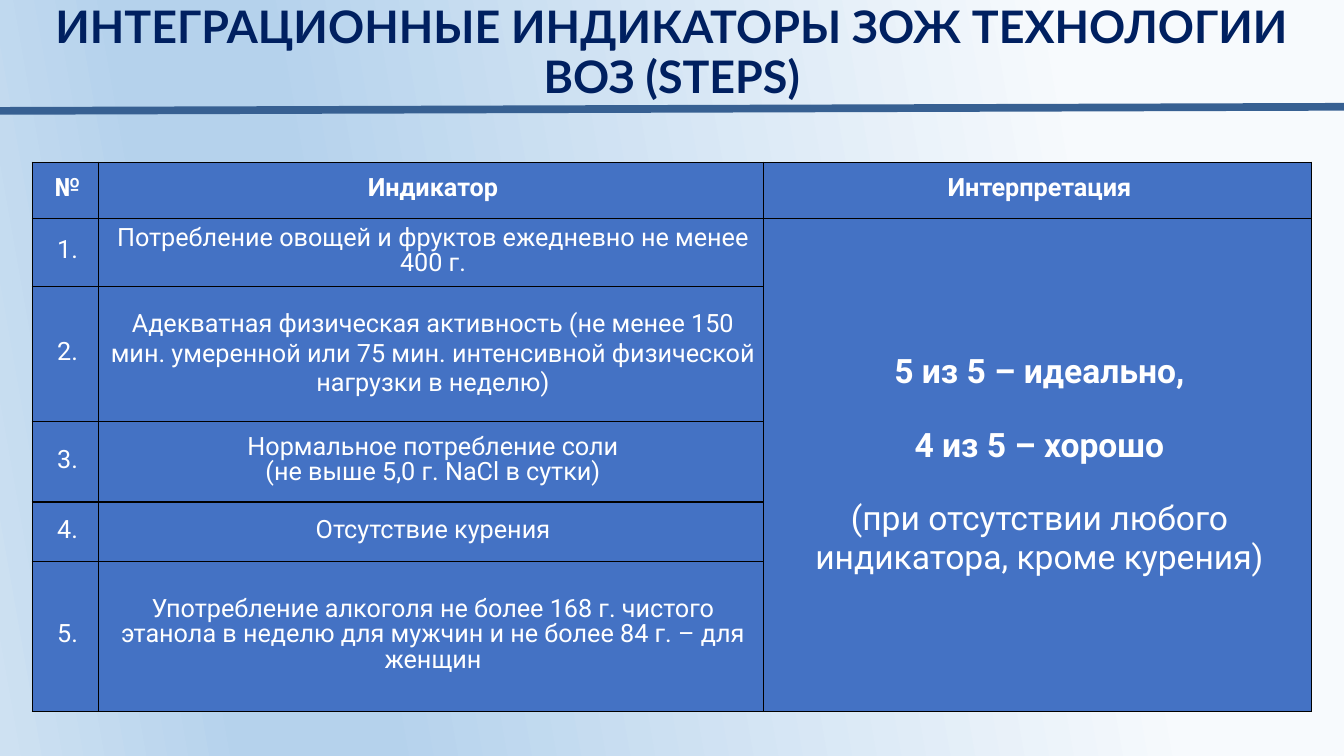
from pptx import Presentation
from pptx.dml.color import RGBColor as Rgb
from pptx.enum.shapes import MSO_CONNECTOR as Link
from pptx.enum.text import MSO_ANCHOR as Anchor, PP_ALIGN as Align
from pptx.oxml import parse_xml
from pptx.oxml.ns import nsdecls, qn
from pptx.util import Inches, Pt

HUES = {"navy": "002060", "rule": "376092", "cell": "4472C4", "text": "FFFFFF",
        "edge": "000000", "pale": "F7FAFD", "sky": "B5D2EC", "mist": "CEE1F2"}
HEAD = ["№", "Индикатор", "Интерпретация"]
SIGNS = [
    "Потребление овощей и фруктов ежедневно не менее 400 г.",
    "Адекватная физическая активность (не менее 150 мин. умеренной или 75 мин. "
    "интенсивной физической нагрузки в неделю)",
    "Нормальное потребление соли\n(не выше 5,0 г. NaCl в сутки)",
    "Отсутствие курения",
    "Употребление алкоголя не более 168 г. чистого этанола в неделю для мужчин "
    "и не более 84 г. – для женщин",
]
SCORES = [("5 из 5 – идеально,", True), ("4 из 5 – хорошо", True),
          ("(при отсутствии любого индикатора, кроме курения)", False)]
COLS = [4.95, 49.44, 40.81]
ROWS = [7.47, 8.93, 17.87, 10.67, 7.87, 19.87]


def write(para, text, size=18, font="Roboto", hue="text", bold=False, lead=None, gap=12):
    """Fill a centred paragraph with formatted text."""
    para.text = text
    para.alignment = Align.CENTER
    para.line_spacing = lead
    para.space_before = para.space_after = Pt(gap)
    for run in para.runs:
        run.font.size, run.font.name, run.font.bold = Pt(size), font, bold
        run.font.color.rgb = Rgb.from_string(HUES[hue])


class Deck:
    """Draws one slide, with lengths in percent of its width and height."""

    def __init__(self):
        """Open a blank slide."""
        self.prs = Presentation()
        self.prs.slide_width, self.prs.slide_height = Inches(13.33), Inches(7.5)
        self.slide = self.prs.slides.add_slide(self.prs.slide_layouts[6])
        self.shapes = self.slide.shapes

    def x(self, share):
        """Turn a share of the width into a length."""
        return round(self.prs.slide_width * share / 100)

    def y(self, share):
        """Turn a share of the height into a length."""
        return round(self.prs.slide_height * share / 100)

    def box(self, left, top, wide, high):
        """Return the place and size of a frame."""
        return self.x(left), self.y(top), self.x(wide), self.y(high)

    def back(self, stops, angle):
        """Paint the background with a linear gradient."""
        self.slide.background.fill.gradient()
        grad = self.slide.element.find(".//" + qn("a:gradFill"))
        marks = "".join(f'<a:gs pos="{pos * 1000}"><a:srgbClr val="{HUES[hue]}"/></a:gs>'
                        for pos, hue in stops)
        fresh = parse_xml(f'<a:gradFill {nsdecls("a")} rotWithShape="1"><a:gsLst>{marks}'
                          f'</a:gsLst><a:lin ang="{angle * 60000}" scaled="0"/></a:gradFill>')
        grad.getparent().replace(grad, fresh)

    def title(self, text, *place):
        """Add the heading."""
        frame = self.shapes.add_textbox(*self.box(*place)).text_frame
        frame.word_wrap = True
        frame.vertical_anchor = Anchor.MIDDLE
        frame.margin_left = frame.margin_right = frame.margin_bottom = 0
        frame.margin_top = Inches(0.01)
        write(frame.paragraphs[0], text, size=32, font="Lato", hue="navy",
              bold=True, lead=0.93, gap=0)

    def rule(self, left, top, right, low):
        """Draw a thick line."""
        line = self.shapes.add_connector(Link.STRAIGHT, *self.box(left, top, right, low))
        line.line.color.rgb = Rgb.from_string(HUES["rule"])
        line.line.width = Pt(5.5)
        line.element.spPr.append(parse_xml(f'<a:effectLst {nsdecls("a")}/>'))

    def table(self, left, top, cols, rows):
        """Add a table of filled, framed cells."""
        place = self.box(left, top, sum(cols), sum(rows))
        grid = self.shapes.add_table(len(rows), len(cols), *place).table
        grid.first_row = grid.horz_banding = False
        for col, wide in zip(grid.columns, cols):
            col.width = self.x(wide)
        for row, high in zip(grid.rows, rows):
            row.height = self.y(high)
        for cell in grid.iter_cells():
            self.dress(cell)
        return grid

    def dress(self, cell):
        """Set the fill, margins and borders of a cell."""
        cell.fill.solid()
        cell.fill.fore_color.rgb = Rgb.from_string(HUES["cell"])
        cell.vertical_anchor = Anchor.MIDDLE
        cell.margin_left = Inches(0.04)
        cell.margin_right = cell.margin_top = cell.margin_bottom = 0
        props = cell._tc.get_or_add_tcPr()
        for spot, side in enumerate("LRTB"):
            props.insert(spot, parse_xml(
                f'<a:ln{side} {nsdecls("a")} w="12700"><a:solidFill>'
                f'<a:srgbClr val="{HUES["edge"]}"/></a:solidFill></a:ln{side}>'))


def main():
    """Build the slide and save it."""
    deck = Deck()
    deck.back([(19, "pale"), (74, "sky"), (83, "sky"), (100, "mist")], 170)
    grid = deck.table(2.4, 21.47, COLS, ROWS)
    for col, text in enumerate(HEAD):
        write(grid.cell(0, col).text_frame.paragraphs[0], text, bold=True, lead=Pt(18))
    for row, text in enumerate(SIGNS, 1):
        write(grid.cell(row, 0).text_frame.paragraphs[0], f"{row}.", lead=Pt(18))
        write(grid.cell(row, 1).text_frame.paragraphs[0], text,
              lead=None if row == 2 else Pt(18))
    grid.cell(1, 2).merge(grid.cell(len(SIGNS), 2))
    frame = grid.cell(1, 2).text_frame
    for spot, (text, bold) in enumerate(SCORES):
        para = frame.add_paragraph() if spot else frame.paragraphs[0]
        write(para, text, size=24, bold=bold)
    deck.title("ИНТЕГРАЦИОННЫЕ ИНДИКАТОРЫ ЗОЖ ТЕХНОЛОГИИ ВОЗ (STEPS)", 3.45, -2.4, 93.1, 18.8)
    deck.rule(0, 14.67, 100, 14.13)
    deck.prs.save("out.pptx")


if __name__ == "__main__":
    main()
